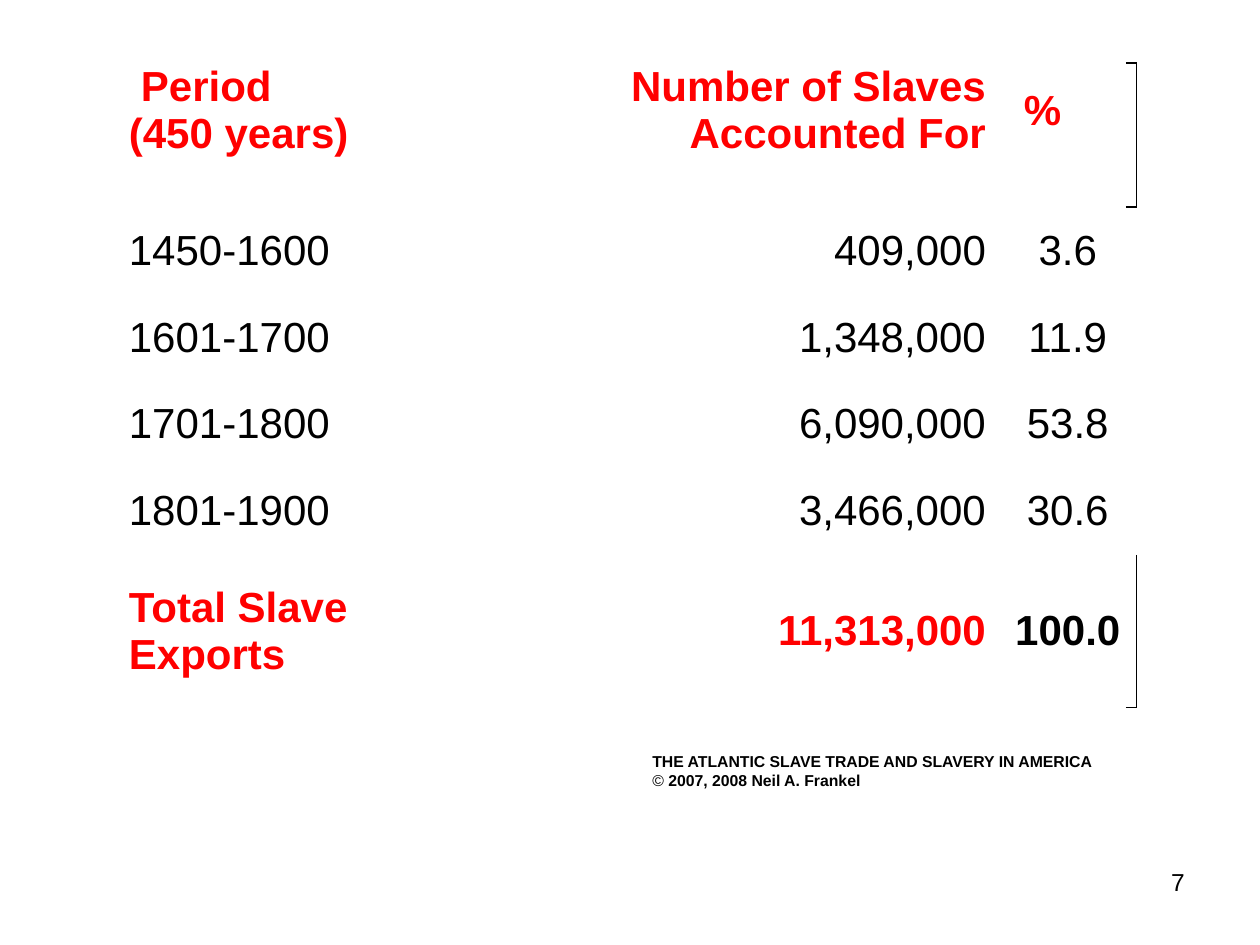
from lxml import etree
from pptx import Presentation
from pptx.dml.color import RGBColor
from pptx.enum.text import MSO_ANCHOR, PP_ALIGN
from pptx.oxml.ns import qn
from pptx.util import Pt

LEFT, CENTER, RIGHT = PP_ALIGN.LEFT, PP_ALIGN.CENTER, PP_ALIGN.RIGHT
TOP, MIDDLE = MSO_ANCHOR.TOP, MSO_ANCHOR.MIDDLE
EMU_PER_PX = 914400 / 126
RED, BLACK, WHITE = "FF0000", "000000", "FFFFFF"
PLAIN_TABLE_STYLE = "{2D5ABB26-0587-4C30-8999-92F81FD0307C}"


def px(length):
    return round(length * EMU_PER_PX)


def color(value):
    return RGBColor.from_string(value)


class SlideBuilder:
    font = "Arial"

    def __init__(self, slide):
        self.slide = slide

    def add_runs(self, paragraph, runs, size, align=LEFT, indent=0):
        """Each run is (text, bold, colour); a newline is a line break."""
        paragraph.alignment = align
        if indent:
            paragraph._p.get_or_add_pPr().set("indent", str(px(indent)))
        for text, bold, run_color in runs:
            for number, line in enumerate(text.split("\n")):
                if number:
                    paragraph.add_line_break()
                if not line:
                    continue
                run = paragraph.add_run()
                run.text = line
                run.font.name = self.font
                run.font.size = Pt(size)
                run.font.bold = bold
                run.font.color.rgb = color(run_color)

    def text_box(self, left, top, width, height, runs, size, align=LEFT):
        shape = self.slide.shapes.add_textbox(px(left), px(top), px(width), px(height))
        shape.text_frame.word_wrap = True
        self.add_runs(shape.text_frame.paragraphs[0], runs, size, align)

    def table(self, left, top, columns, rows):
        shape = self.slide.shapes.add_table(
            len(rows), len(columns), px(left), px(top), px(sum(columns)), px(sum(rows)))
        table = shape.table
        table._tbl.tblPr.find(qn("a:tableStyleId")).text = PLAIN_TABLE_STYLE
        for column, width in zip(table.columns, columns):
            column.width = px(width)
        for row, height in zip(table.rows, rows):
            row.height = px(height)
        for cell in table.iter_cells():
            cell.margin_left = cell.margin_right = px(2)
            cell.margin_top = cell.margin_bottom = px(1)
            cell.fill.solid()
            cell.fill.fore_color.rgb = color(WHITE)
        return table

    def cell_text(self, cell, text, bold, text_color, align, anchor=MIDDLE, indent=0):
        cell.vertical_anchor = anchor
        self.add_runs(cell.text_frame.paragraphs[0], [(text, bold, text_color)],
                      24, align, indent)

    def cell_borders(self, cell, sides):
        """Sides are tags in schema order: lnL, lnR, lnT, lnB."""
        cell.fill.background()
        properties = cell._tc.get_or_add_tcPr()
        for position, side in enumerate(sides):
            line = etree.Element(qn("a:" + side), w=str(Pt(0.75)))
            fill = etree.SubElement(line, qn("a:solidFill"))
            etree.SubElement(fill, qn("a:srgbClr"), val=BLACK)
            properties.insert(position, line)


def main():
    presentation = Presentation()
    presentation.slide_width, presentation.slide_height = px(1260), px(945)
    slide = presentation.slides.add_slide(presentation.slide_layouts[6])
    builder = SlideBuilder(slide)

    # Slide number
    builder.text_box(903, 861, 294, 66, [("7", False, BLACK)], 14, RIGHT)

    # Table: narrow spacer columns stand between the three text columns
    table = builder.table(116, 63, [11, 262, 21, 578, 11, 11, 116, 11],
                          [144, 87, 87, 87, 87, 153])
    period, number, percent, edge = 1, 3, 6, 7
    last = len(table.rows) - 1

    # Header row, set from the top; the percent sign sits half a line lower
    headers = [(period, "Period\n(450 years)", LEFT, 12),
               (number, "Number of Slaves Accounted For", RIGHT, 0),
               (percent, "%", LEFT, 12)]
    for column, text, align, indent in headers:
        builder.cell_text(table.cell(0, column), text, True, RED, align, TOP, indent)
    table.cell(0, percent).margin_top = px(25)

    # Periods and total
    records = [("1450-1600", "409,000", "3.6"),
               ("1601-1700", "1,348,000", "11.9"),
               ("1701-1800", "6,090,000", "53.8"),
               ("1801-1900", "3,466,000", "30.6"),
               ("Total Slave Exports", "11,313,000", "100.0")]
    for row, record in enumerate(records, start=1):
        total = row == last
        label_color = RED if total else BLACK
        styles = [(period, LEFT, label_color), (number, RIGHT, label_color),
                  (percent, CENTER, BLACK)]
        for text, (column, align, text_color) in zip(record, styles):
            builder.cell_text(table.cell(row, column), text, total, text_color, align)

    # Lines at the right edge of the header and total rows
    builder.cell_borders(table.cell(0, edge), ["lnR", "lnT", "lnB"])
    builder.cell_borders(table.cell(last, edge), ["lnR", "lnB"])

    # Source credit
    builder.text_box(640, 746, 494, 89, [
        ("THE ATLANTIC SLAVE TRADE AND SLAVERY IN AMERICA\n", True, BLACK),
        ("©", False, BLACK),
        (" 2007, 2008 Neil A. Frankel", True, BLACK)], 9)

    presentation.save("out.pptx")


if __name__ == "__main__":
    main()
